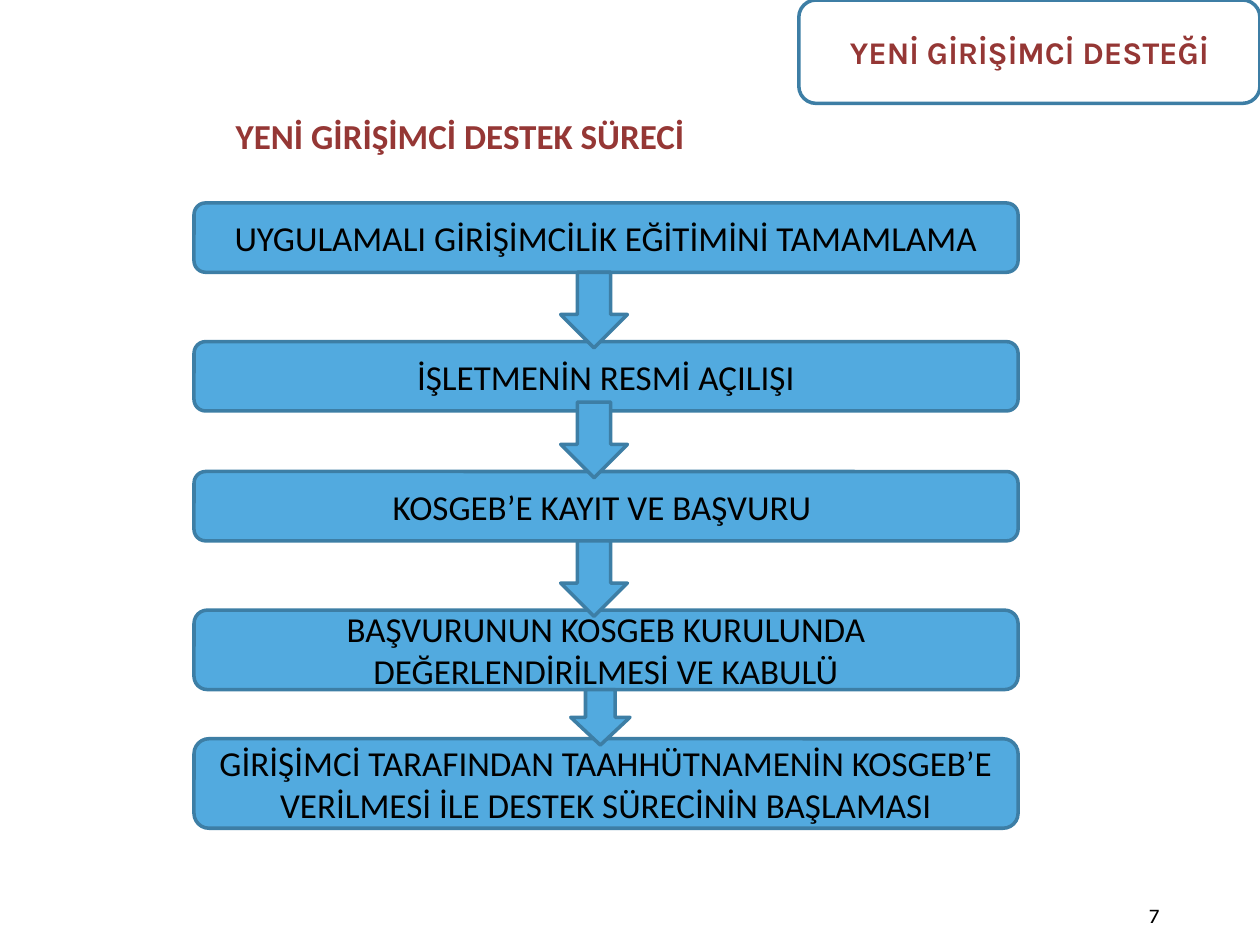
from dataclasses import dataclass
from itertools import pairwise

from pptx import Presentation
from pptx.dml.color import RGBColor
from pptx.enum.shapes import MSO_SHAPE
from pptx.enum.text import MSO_ANCHOR, MSO_AUTO_SIZE, PP_ALIGN
from pptx.util import Inches, Pt


@dataclass(frozen=True)
class Theme:
    ink: str = "000000"
    accent: str = "953735"
    step_fill: str = "52AADF"
    outline: str = "3D7EA5"
    body_font: str = "Calibri"
    label_font: str = "Karla"
    body_size: int = 20
    badge_size: int = 18
    number_size: int = 12
    outline_width: int = 2


THEME = Theme()

STEPS = [
    ("UYGULAMALI GİRİŞİMCİLİK EĞİTİMİNİ TAMAMLAMA", 0, 0.55),
    ("İŞLETMENİN RESMİ AÇILIŞI", 1.1, 0.55),
    ("KOSGEB’E KAYIT VE BAŞVURU ", 2.13, 0.55),
    ("BAŞVURUNUN KOSGEB KURULUNDA DEĞERLENDİRİLMESİ VE KABULÜ", 3.23, 0.63),
    ("GİRİŞİMCİ TARAFINDAN TAAHHÜTNAMENİN KOSGEB’E VERİLMESİ "
     "İLE DESTEK SÜRECİNİN BAŞLAMASI", 4.25, 0.71),
]
ARROWS = [(2.91, 0.53, 0.6)] * 3 + [(2.99, 0.47, 0.44)]
ARROW_OVERLAP = 0.05


def write(holder, text, font=THEME.body_font, size=THEME.body_size,
          color=THEME.ink, bold=False, align=PP_ALIGN.CENTER,
          anchor=MSO_ANCHOR.MIDDLE, indent=0.1):
    frame = holder.text_frame
    frame.word_wrap = True
    frame.auto_size = MSO_AUTO_SIZE.NONE
    frame.vertical_anchor = anchor
    frame.margin_left = Inches(indent)
    paragraph = frame.paragraphs[0]
    paragraph.alignment = align
    run = paragraph.add_run()
    run.text = text
    run.font.name = font
    run.font.size = Pt(size)
    run.font.bold = bold
    run.font.color.rgb = RGBColor.from_string(color)


def outlined(slide, preset, box, fill=None):
    shape = slide.shapes.add_shape(preset, *map(Inches, box))
    shape.shadow.inherit = False
    if fill:
        shape.fill.solid()
        shape.fill.fore_color.rgb = RGBColor.from_string(fill)
    else:
        shape.fill.background()
    shape.line.color.rgb = RGBColor.from_string(THEME.outline)
    shape.line.width = Pt(THEME.outline_width)
    return shape


def place_heading(slide, box):
    heading = slide.shapes.title
    heading.left, heading.top, heading.width, heading.height = map(Inches, box)
    write(heading, "YENİ GİRİŞİMCİ DESTEK SÜRECİ", color=THEME.accent, bold=True,
          align=PP_ALIGN.LEFT, anchor=MSO_ANCHOR.BOTTOM, indent=0.41)


def place_page_number(slide, box):
    number = slide.shapes.add_textbox(*map(Inches, box))
    write(number, "7", font=THEME.label_font, size=THEME.number_size,
          align=PP_ALIGN.RIGHT)


def place_badge(slide, box):
    badge = outlined(slide, MSO_SHAPE.ROUNDED_RECTANGLE, box)
    write(badge, "YENİ GİRİŞİMCİ DESTEĞİ", font=THEME.label_font,
          size=THEME.badge_size, color=THEME.accent, bold=True)


def place_process(slide, left, top, width):
    for text, offset, height in STEPS:
        step = outlined(slide, MSO_SHAPE.ROUNDED_RECTANGLE,
                        (left, top + offset, width, height), THEME.step_fill)
        write(step, text)
    for (_, (_, next_offset, _)), (shift, arrow_width, arrow_height) in zip(
            pairwise(STEPS), ARROWS):
        arrow_top = top + next_offset + ARROW_OVERLAP - arrow_height
        outlined(slide, MSO_SHAPE.DOWN_ARROW,
                 (left + shift, arrow_top, arrow_width, arrow_height),
                 THEME.step_fill)


def main():
    deck = Presentation()
    deck.slide_width, deck.slide_height = Inches(10), Pt(538)
    slide = deck.slides.add_slide(deck.slide_layouts[5])
    place_heading(slide, (1.46, 0.82, 7.89, 0.47))
    place_page_number(slide, (6.97, 7.06, 2.33, 0.4))
    place_badge(slide, (6.34, 0, 3.66, 0.82))
    place_process(slide, 1.54, 1.61, 6.54)
    deck.save("out.pptx")


if __name__ == "__main__":
    main()
